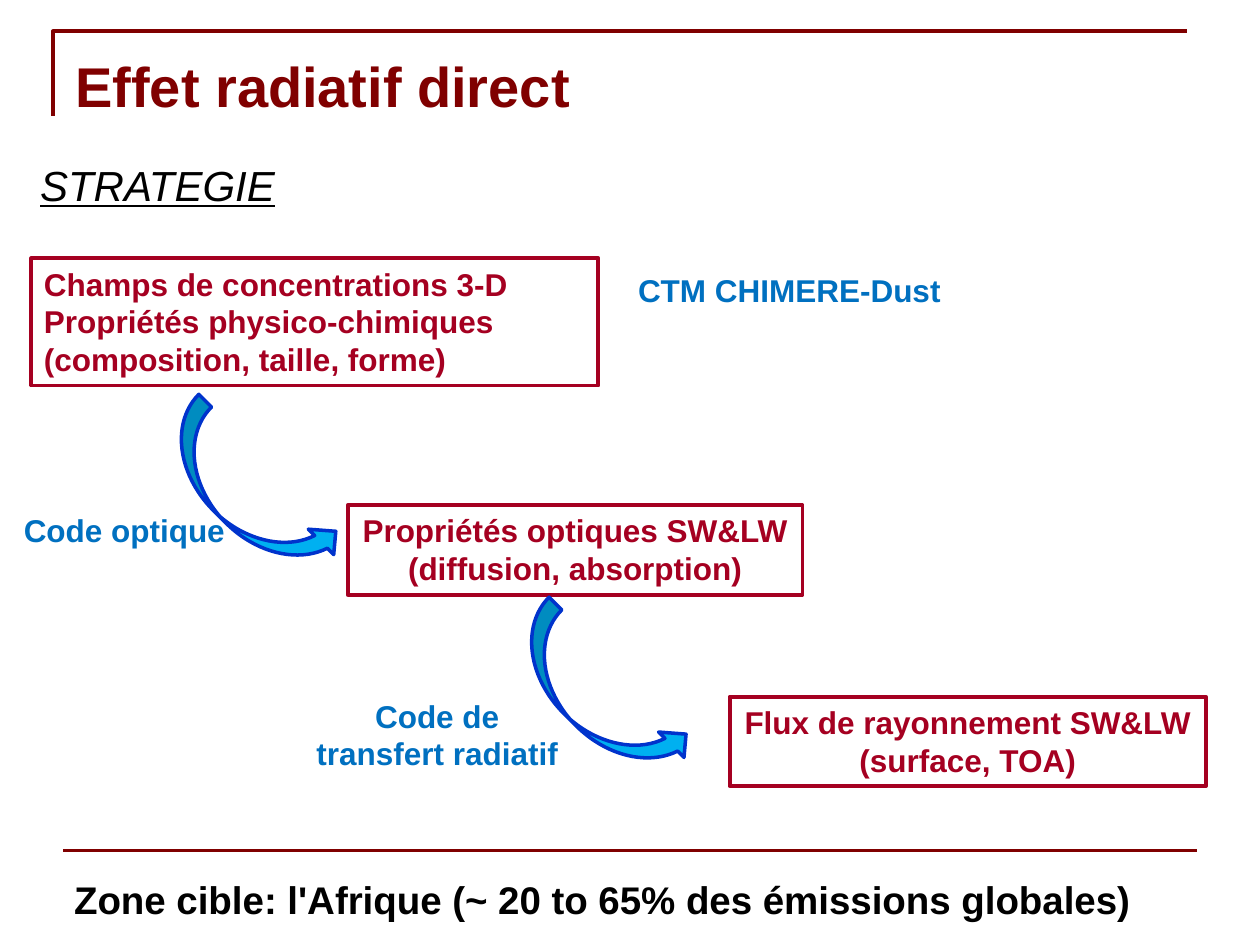
from dataclasses import dataclass

import pptx
import pptx.dml.color
import pptx.enum.shapes
import pptx.enum.text
import pptx.oxml.ns
import pptx.util
from lxml import etree

RGBColor = pptx.dml.color.RGBColor
Shapes = pptx.enum.shapes.MSO_SHAPE
Align = pptx.enum.text.PP_ALIGN

MAROON = RGBColor(0x80, 0x00, 0x00)
CRIMSON = RGBColor(0xA5, 0x00, 0x21)
BLUE = RGBColor(0x00, 0x70, 0xC0)
SKY = RGBColor(0x00, 0xB0, 0xF0)
ROYAL = RGBColor(0x00, 0x33, 0xCC)
BLACK = RGBColor(0x00, 0x00, 0x00)

COLUMNS, ROWS = 100, 75
WIDTH, HEIGHT = pptx.util.Inches(10), pptx.util.Inches(7.5)
RULE_WEIGHT = 2.25


@dataclass(frozen=True)
class Area:
    column: float
    row: float
    columns: float
    rows: float

    def emu(self) -> tuple[int, int, int, int]:
        return x(self.column), y(self.row), x(self.columns), y(self.rows)


@dataclass(frozen=True)
class Step:
    area: Area
    text: str
    align: Align = Align.CENTER
    wrap: bool = False


STEPS = [
    Step(Area(2.5, 20.5, 45, 10.1),
         "Champs de concentrations 3-D\n"
         "Propriétés physico-chimiques (composition, taille, forme)",
         Align.LEFT, True),
    Step(Area(27.6, 40.1, 36.1, 7.1),
         "Propriétés optiques SW&LW\n(diffusion, absorption)"),
    Step(Area(57.9, 55.3, 37.8, 7.1),
         "Flux de rayonnement SW&LW\n(surface, TOA)"),
]
TOOLS = [
    Step(Area(0.9, 40.1, 18.1, 4), "Code optique", Align.LEFT),
    Step(Area(24, 54.8, 21.4, 7.1), "Code de\ntransfert radiatif"),
    Step(Area(48.7, 21, 27.9, 4), "CTM CHIMERE-Dust", wrap=True),
]
ARROWS = [Area(11.3, 36.4, 16.8, 5.7), Area(39.1, 52.5, 16.8, 5.7)]


def x(columns: float) -> int:
    return round(WIDTH * columns / COLUMNS)


def y(rows: float) -> int:
    return round(HEIGHT * rows / ROWS)


def write(shape, text: str, *, size: float = 18, color: RGBColor = BLACK,
          bold: bool = True, italic: bool = False, underline: bool = False,
          align: Align = Align.LEFT, wrap: bool = True,
          spacing: float = 1.0) -> None:
    frame = shape.text_frame
    frame.word_wrap = wrap
    frame.vertical_anchor = pptx.enum.text.MSO_ANCHOR.TOP
    frame.text = text
    for paragraph in frame.paragraphs:
        paragraph.alignment = align
        paragraph.line_spacing = spacing
        for run in paragraph.runs:
            font = run.font
            font.name = "Arial"
            font.size = pptx.util.Pt(size)
            font.bold, font.italic, font.underline = bold, italic, underline
            font.color.rgb = color


def outline(shape, color: RGBColor, weight: float = RULE_WEIGHT) -> None:
    shape.line.color.rgb = color
    shape.line.width = pptx.util.Pt(weight)


def add_label(slide, area: Area, text: str, **text_format) -> None:
    write(slide.shapes.add_textbox(*area.emu()), text, **text_format)


def add_step(slide, step: Step) -> None:
    box = slide.shapes.add_shape(Shapes.RECTANGLE, *step.area.emu())
    box.shadow.inherit = False
    box.fill.background()
    outline(box, CRIMSON)
    write(box, step.text, color=CRIMSON, align=step.align, wrap=step.wrap)


def add_arrow(slide, area: Area) -> None:
    arrow = slide.shapes.add_shape(Shapes.CURVED_UP_ARROW, *area.emu())
    arrow.shadow.inherit = False
    arrow.rotation = 45
    arrow.fill.solid()
    arrow.fill.fore_color.rgb = SKY
    outline(arrow, ROYAL, 2)


def add_title_corner(slide) -> None:
    builder = slide.shapes.build_freeform(x(4.2), y(9.2))
    builder.add_line_segments([(x(4.2), y(2.5)), (x(94.2), y(2.5))], close=False)
    corner = builder.convert_to_shape()
    corner.shadow.inherit = False
    corner.fill.background()
    outline(corner, MAROON)


def add_footer_rule(slide) -> None:
    rule = slide.shapes.add_connector(
        pptx.enum.shapes.MSO_CONNECTOR.STRAIGHT, x(5), y(67.5), x(95), y(67.5))
    outline(rule, MAROON)
    properties = rule._element.spPr
    etree.SubElement(properties, pptx.oxml.ns.qn("a:effectLst"))


def main() -> None:
    presentation = pptx.Presentation()
    presentation.slide_width, presentation.slide_height = WIDTH, HEIGHT
    slide = presentation.slides.add_slide(presentation.slide_layouts[6])

    add_title_corner(slide)
    add_footer_rule(slide)
    add_label(slide, Area(5, 3.6, 90, 6), "Effet radiatif direct",
              size=32, color=MAROON)
    for step in STEPS:
        add_step(slide, step)
    for area in ARROWS:
        add_arrow(slide, area)
    for tool in TOOLS:
        add_label(slide, tool.area, tool.text, color=BLUE,
                  align=tool.align, wrap=tool.wrap)
    add_label(slide, Area(4.9, 69, 87.7, 4.7),
              "Zone cible: l'Afrique (~ 20 to 65% des émissions globales)",
              size=22, wrap=False)
    add_label(slide, Area(2.2, 12.6, 95.7, 6.4), "STRATEGIE", size=24,
              bold=False, italic=True, underline=True, spacing=0.9)

    presentation.save("out.pptx")


if __name__ == "__main__":
    main()
